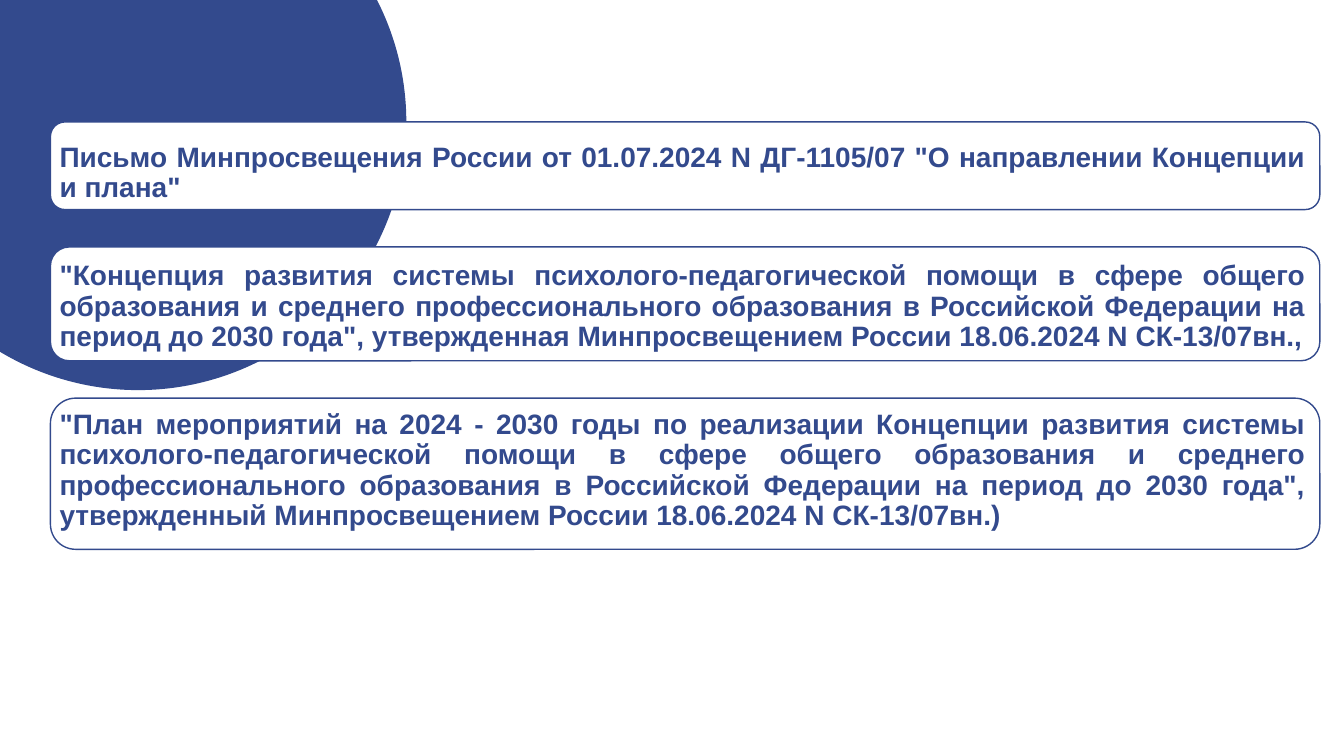
"""Build a slide with three framed policy papers over a large disc."""
from dataclasses import dataclass

import pptx
import pptx.dml.color
import pptx.enum.shapes
import pptx.enum.text
import pptx.shapes.autoshape
import pptx.slide
import pptx.text.text
import pptx.util

Inches = pptx.util.Inches
Pt = pptx.util.Pt
RGB = pptx.dml.color.RGBColor
Shape = pptx.enum.shapes.MSO_SHAPE


@dataclass(frozen=True)
class Theme:
    """Colours, font and type sizes."""
    navy: RGB = RGB(0x33, 0x4A, 0x8D)
    white: RGB = RGB(0xFF, 0xFF, 0xFF)
    font: str = "Arial"
    size: float = 20
    lead: float = 0.9
    gap: float = 41.5
    rule: float = 1


@dataclass(frozen=True)
class Box:
    """Place and size in inches."""
    left: float
    top: float
    width: float
    height: float


@dataclass(frozen=True)
class Paper:
    """One framed paper: frame height and wording."""
    height: float
    text: str


THEME = Theme()
DISC = Box(-1.29, -1.45, 5.32, 5.32)
BODY = Box(0.37, 1.37, 12.68, 3.96)
LEFT, TOP, WIDTH, GAP = 0.5, 1.21, 12.59, 0.37
INDENT = 0.12
PAPERS = [
    Paper(0.87, 'Письмо Минпросвещения России от 01.07.2024 N ДГ-1105/07 '
                '"О направлении Концепции и плана"'),
    Paper(1.13, '"Концепция развития системы психолого-педагогической помощи '
                'в сфере общего образования и среднего профессионального '
                'образования в Российской Федерации на период до 2030 года", '
                'утвержденная Минпросвещением России 18.06.2024 '
                'N СК-13/07вн.,'),
    Paper(1.5, '"План мероприятий на 2024 - 2030 годы по реализации Концепции '
               'развития системы психолого-педагогической помощи в сфере '
               'общего образования и среднего профессионального образования '
               'в Российской Федерации на период до 2030 года", утвержденный '
               'Минпросвещением России 18.06.2024 N СК-13/07вн.)'),
]


def add_form(slide: pptx.slide.Slide, kind: Shape, box: Box,
             fill: RGB) -> pptx.shapes.autoshape.Shape:
    """Add a flat filled shape without a line."""
    form = slide.shapes.add_shape(
        kind, Inches(box.left), Inches(box.top),
        Inches(box.width), Inches(box.height))
    form.shadow.inherit = False
    form.fill.solid()
    form.fill.fore_color.rgb = fill
    form.line.fill.background()
    return form


def add_frames(slide: pptx.slide.Slide) -> None:
    """Stack one rounded frame per paper with equal gaps."""
    top = TOP
    for paper in PAPERS:
        frame = add_form(slide, Shape.ROUNDED_RECTANGLE,
                         Box(LEFT, top, WIDTH, paper.height), THEME.white)
        frame.line.color.rgb = THEME.navy
        frame.line.width = Pt(THEME.rule)
        top += paper.height + GAP


def add_text(para: pptx.text.text._Paragraph, text: str, space: float) -> None:
    """Format a paragraph and add its run."""
    para.alignment = pptx.enum.text.PP_ALIGN.JUSTIFY
    para.line_spacing = THEME.lead
    para.space_before = Pt(space)
    props = para._p.get_or_add_pPr()
    props.set("marL", str(Inches(INDENT)))
    props.set("indent", "0")
    run = para.add_run()
    run.text = text
    run.font.name = THEME.font
    run.font.size = Pt(THEME.size)
    run.font.bold = True
    run.font.color.rgb = THEME.navy


def fill_body(slide: pptx.slide.Slide) -> None:
    """Move the body placeholder to the front and fill it."""
    body = slide.placeholders[1]
    body.left, body.top = Inches(BODY.left), Inches(BODY.top)
    body.width, body.height = Inches(BODY.width), Inches(BODY.height)
    slide.shapes._spTree.append(body._element)
    frame = body.text_frame
    frame.word_wrap = True
    frame.auto_size = pptx.enum.text.MSO_AUTO_SIZE.NONE
    frame.vertical_anchor = pptx.enum.text.MSO_ANCHOR.TOP
    for rank, paper in enumerate(PAPERS):
        para = frame.add_paragraph() if rank else frame.paragraphs[0]
        add_text(para, paper.text, THEME.gap if rank else 0)


def main() -> None:
    """Build and save the slide."""
    deck = pptx.Presentation()
    deck.slide_width, deck.slide_height = Inches(13.33), Inches(7.5)
    slide = deck.slides.add_slide(deck.slide_layouts[2])
    title = slide.shapes.title._element
    title.getparent().remove(title)
    add_form(slide, Shape.OVAL, DISC, THEME.navy)
    add_frames(slide)
    fill_body(slide)
    deck.save("out.pptx")


if __name__ == "__main__":
    main()
